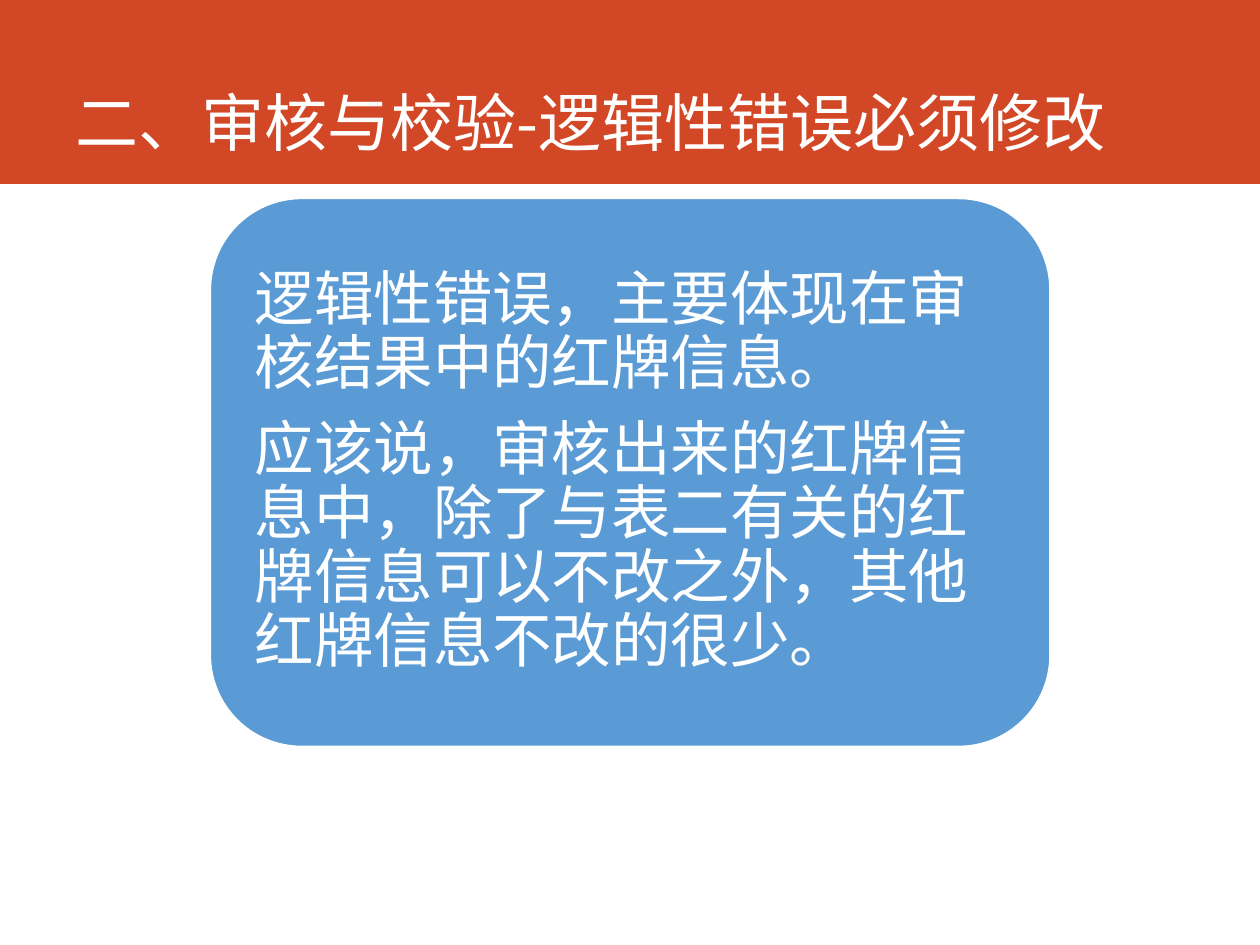
from lxml.etree import SubElement
from pptx import Presentation
from pptx.dml.color import RGBColor
from pptx.enum.shapes import MSO_SHAPE
from pptx.enum.text import MSO_ANCHOR, PP_ALIGN
from pptx.oxml.ns import qn
from pptx.util import Cm, Pt

WHITE = RGBColor(0xFF, 0xFF, 0xFF)
ORANGE = RGBColor(0xD2, 0x47, 0x26)
BLUE = RGBColor(0x5B, 0x9B, 0xD5)
CJK_FONT = "Noto Sans CJK SC"

RULES = [
    "逻辑性错误，主要体现在审核结果中的红牌信息。",
    "应该说，审核出来的红牌信息中，除了与表二有关的红牌信息可以不改之外，其他红牌信息不改的很少。",
]


def add_text(paragraph, text, size, font_name):
    paragraph.alignment = PP_ALIGN.LEFT
    paragraph.line_spacing = 0.9
    run = paragraph.add_run()
    run.text = text
    run.font.size = Pt(size)
    run.font.name = font_name
    run.font.color.rgb = WHITE
    SubElement(run.font._element, qn("a:ea")).set("typeface", CJK_FONT)


def add_filled_shape(preset, left, top, width, height, color):
    shape = slide.shapes.add_shape(preset, Cm(left), Cm(top), Cm(width), Cm(height))
    shape.shadow.inherit = False
    shape.fill.solid()
    shape.fill.fore_color.rgb = color
    return shape


presentation = Presentation()
presentation.slide_width = Cm(25.4)
presentation.slide_height = Cm(19.05)
slide = presentation.slides.add_slide(presentation.slide_layouts[5])

header = add_filled_shape(MSO_SHAPE.RECTANGLE, 0, 0, 25.4, 3.71, ORANGE)
header.line.fill.background()
slide.shapes._spTree.insert(2, header._element)

heading = slide.shapes.title
heading.left, heading.top = Cm(1.27), Cm(0)
heading.width, heading.height = Cm(22.4), Cm(3.35)
heading.text_frame.vertical_anchor = MSO_ANCHOR.BOTTOM
add_text(heading.text_frame.paragraphs[0], "二、审核与校验-逻辑性错误必须修改", 36, CJK_FONT)

rule_card = add_filled_shape(MSO_SHAPE.ROUNDED_RECTANGLE, 4.24, 4, 16.93, 11.05, BLUE)
rule_card.line.color.rgb = WHITE
rule_card.line.width = Pt(1)
rules = rule_card.text_frame
rules.word_wrap = True
rules.vertical_anchor = MSO_ANCHOR.MIDDLE
rules.margin_left = rules.margin_right = Cm(0.36)
rules.margin_top = rules.margin_bottom = Cm(0.36)
for index, rule in enumerate(RULES):
    paragraph = rules.add_paragraph() if index else rules.paragraphs[0]
    paragraph.space_after = Pt(12)
    add_text(paragraph, rule, 34, "Karla")

presentation.save("out.pptx")
